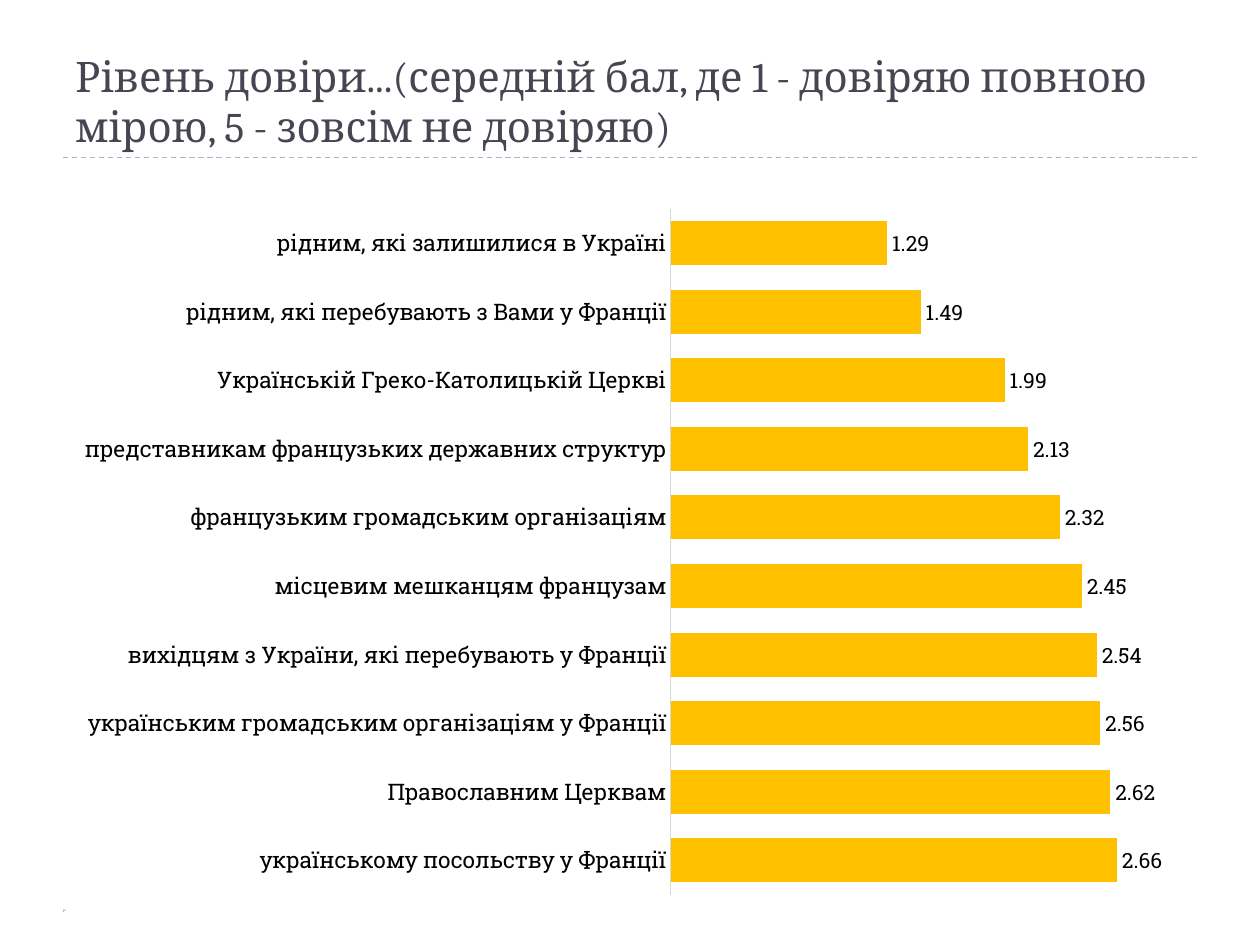
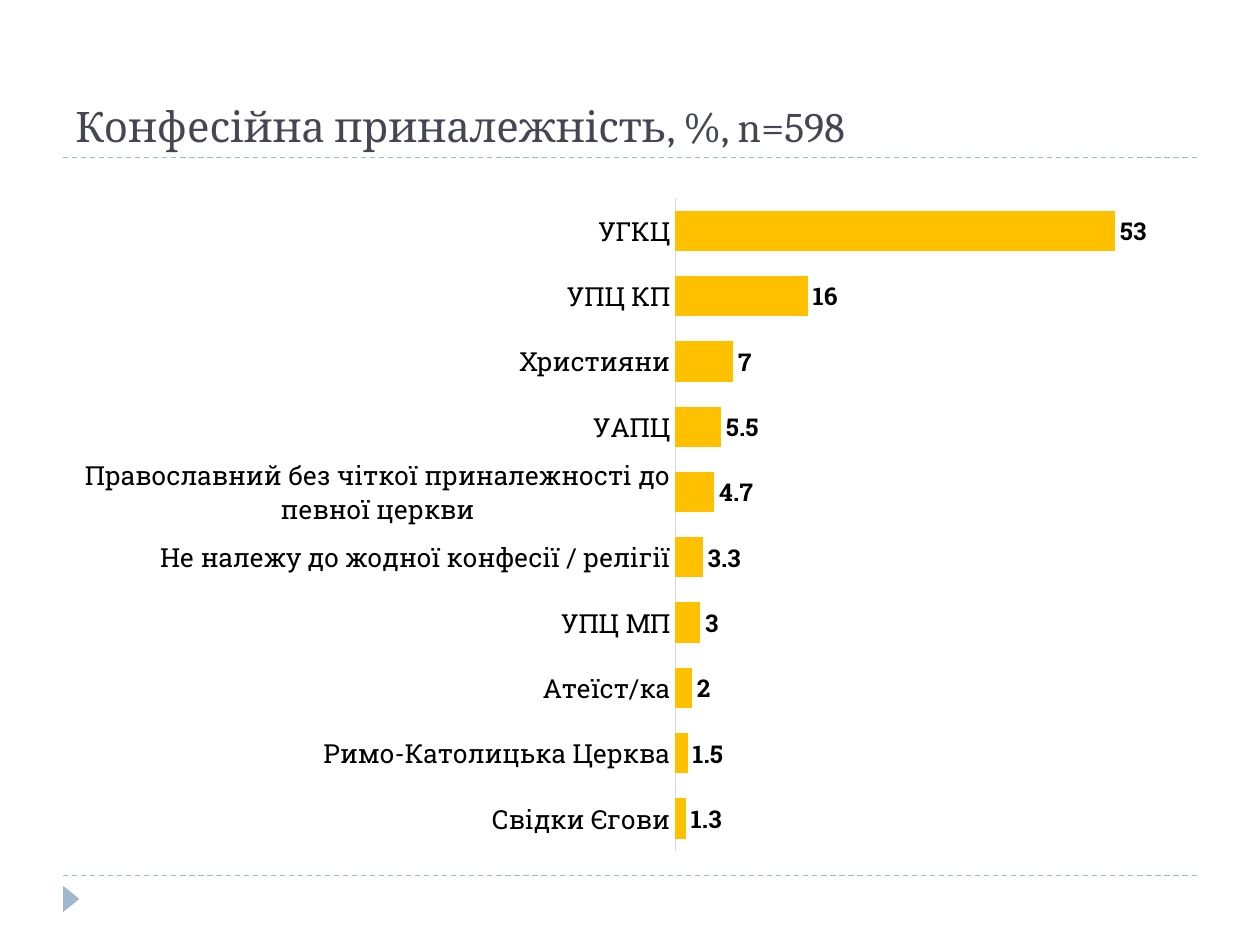
from lxml import etree
from pptx import Presentation
from pptx.chart.data import CategoryChartData
from pptx.dml.color import RGBColor
from pptx.enum.chart import XL_CHART_TYPE, XL_LABEL_POSITION, XL_TICK_MARK
from pptx.enum.dml import MSO_LINE
from pptx.enum.shapes import MSO_CONNECTOR, MSO_SHAPE
from pptx.enum.text import MSO_ANCHOR
from pptx.oxml import parse_xml
from pptx.oxml.ns import nsdecls, qn
from pptx.util import Inches, Pt

ACCENT, INK, BAR, AXIS = "9FB8CD", "464653", "FFC000", "D9D9D9"
TITLE_FONT, CHART_FONT = "Cambria", "Roboto Slab"
LEFT, WIDTH, TITLE_TOP, TITLE_HEIGHT = 0.5, 9, 0.17, 1.08
RULES = (6.95, 1.25)

SURVEYS = [
    {
        "title": "Рівень довіри...(середній бал, де 1 - довіряю повною мірою, 5 - зовсім не довіряю)",
        "top": 1.55, "height": 5.67, "gap": 56, "overlap": 0,
        "category_size": 13, "value_size": 12, "value_bold": False,
        "format": "####.00", "maximum": 3, "plot_x": 0.536, "plot_width": 0.444,
        "answers": [
            ("рідним, які залишилися в Україні", 1.29),
            ("рідним, які перебувають з Вами у Франції", 1.49),
            ("Українській Греко-Католицькій Церкві", 1.99),
            ("представникам французьких державних структур", 2.13),
            ("французьким громадським організаціям", 2.32),
            ("місцевим мешканцям французам", 2.45),
            ("вихідцям з України, які перебувають у Франції", 2.54),
            ("українським громадським організаціям у Франції", 2.56),
            ("Православним Церквам", 2.62),
            ("українському посольству у Франції", 2.66),
        ],
    },
    {
        "title": "Конфесійна приналежність, %, n=598",
        "top": 1.47, "height": 5.4, "gap": 62, "overlap": 10,
        "category_size": 15, "value_size": 14, "value_bold": True,
        "format": "General", "maximum": 60, "plot_x": 0.54, "plot_width": 0.439,
        "answers": [
            ("УГКЦ", 53),
            ("УПЦ КП", 16),
            ("Християни", 7),
            ("УАПЦ", 5.5),
            ("Православний без чіткої приналежності до певної церкви", 4.7),
            ("Не належу до жодної конфесії / релігії", 3.3),
            ("УПЦ МП", 3),
            ("Атеїст/ка", 2),
            ("Римо-Католицька Церква", 1.5),
            ("Свідки Єгови", 1.3),
        ],
    },
]


def color(value):
    return RGBColor.from_string(value)


def style_font(font, name, size, ink, bold=False):
    font.name = name
    font.size = Pt(size)
    font.bold = bold
    font.color.rgb = color(ink)


deck = Presentation()
deck.slide_width = Inches(10)
deck.slide_height = Inches(7.5)

for survey in SURVEYS:
    slide = deck.slides.add_slide(deck.slide_layouts[6])

    for height in RULES:
        rule = slide.shapes.add_connector(
            MSO_CONNECTOR.STRAIGHT, Inches(LEFT), Inches(height), Inches(LEFT + WIDTH), Inches(height))
        rule.line.color.rgb = color(ACCENT)
        rule.line.width = Pt(0.75)
        rule.line.dash_style = MSO_LINE.DASH
        etree.SubElement(rule.element.spPr, qn("a:effectLst"))

    marker = slide.shapes.add_shape(
        MSO_SHAPE.ISOSCELES_TRIANGLE, Inches(0.46), Inches(7.07), Inches(0.21), Inches(0.13))
    marker.rotation = 90
    marker.shadow.inherit = False
    marker.fill.solid()
    marker.fill.fore_color.rgb = color(ACCENT)
    marker.line.fill.background()

    heading = slide.shapes.add_textbox(
        Inches(LEFT), Inches(TITLE_TOP), Inches(WIDTH), Inches(TITLE_HEIGHT)).text_frame
    heading.word_wrap = True
    heading.vertical_anchor = MSO_ANCHOR.BOTTOM
    title = heading.paragraphs[0].add_run()
    title.text = survey["title"]
    style_font(title.font, TITLE_FONT, 24, INK)

    scores = CategoryChartData(number_format=survey["format"])
    scores.categories = [answer for answer, score in survey["answers"]]
    scores.add_series("Series 1", [score for answer, score in survey["answers"]])
    chart = slide.shapes.add_chart(
        XL_CHART_TYPE.BAR_CLUSTERED, Inches(LEFT), Inches(survey["top"]),
        Inches(WIDTH), Inches(survey["height"]), scores).chart
    chart.has_legend = False
    chart.has_title = False
    style_font(chart.font, CHART_FONT, survey["value_size"], "000000")

    answers_axis = chart.category_axis
    answers_axis.reverse_order = True
    answers_axis.major_tick_mark = XL_TICK_MARK.NONE
    answers_axis.format.line.color.rgb = color(AXIS)
    answers_axis.format.line.width = Pt(0.75)
    style_font(answers_axis.tick_labels.font, CHART_FONT, survey["category_size"], "000000")

    score_axis = chart.value_axis
    score_axis.visible = False
    score_axis.has_major_gridlines = False
    score_axis.minimum_scale = 0
    score_axis.maximum_scale = survey["maximum"]

    plot = chart.plots[0]
    plot.gap_width = survey["gap"]
    plot.overlap = survey["overlap"]
    plot.vary_by_categories = False
    bars = plot.series[0]
    bars.format.fill.solid()
    bars.format.fill.fore_color.rgb = color(BAR)

    labels = bars.data_labels
    labels.show_value = True
    labels.position = XL_LABEL_POSITION.OUTSIDE_END
    labels.number_format = survey["format"]
    labels.number_format_is_linked = False
    style_font(labels.font, CHART_FONT, survey["value_size"], "000000", survey["value_bold"])

    chart_space = chart.element
    chart_space.find(qn("c:chart")).addnext(parse_xml(
        f'<c:spPr {nsdecls("c", "a")}><a:solidFill><a:srgbClr val="FFFFFF"/></a:solidFill>'
        '<a:ln><a:noFill/></a:ln></c:spPr>'))
    plot_area = chart_space.find(".//" + qn("c:plotArea"))
    for automatic in plot_area.findall(qn("c:layout")):
        plot_area.remove(automatic)
    layout = etree.Element(qn("c:layout"))
    frame = etree.SubElement(layout, qn("c:manualLayout"))
    for tag, value in (
        ("layoutTarget", "inner"), ("xMode", "edge"), ("yMode", "edge"),
        ("x", survey["plot_x"]), ("y", 0.019), ("w", survey["plot_width"]), ("h", 0.96),
    ):
        etree.SubElement(frame, qn(f"c:{tag}")).set("val", str(value))
    plot_area.insert(0, layout)

deck.save("out.pptx")
